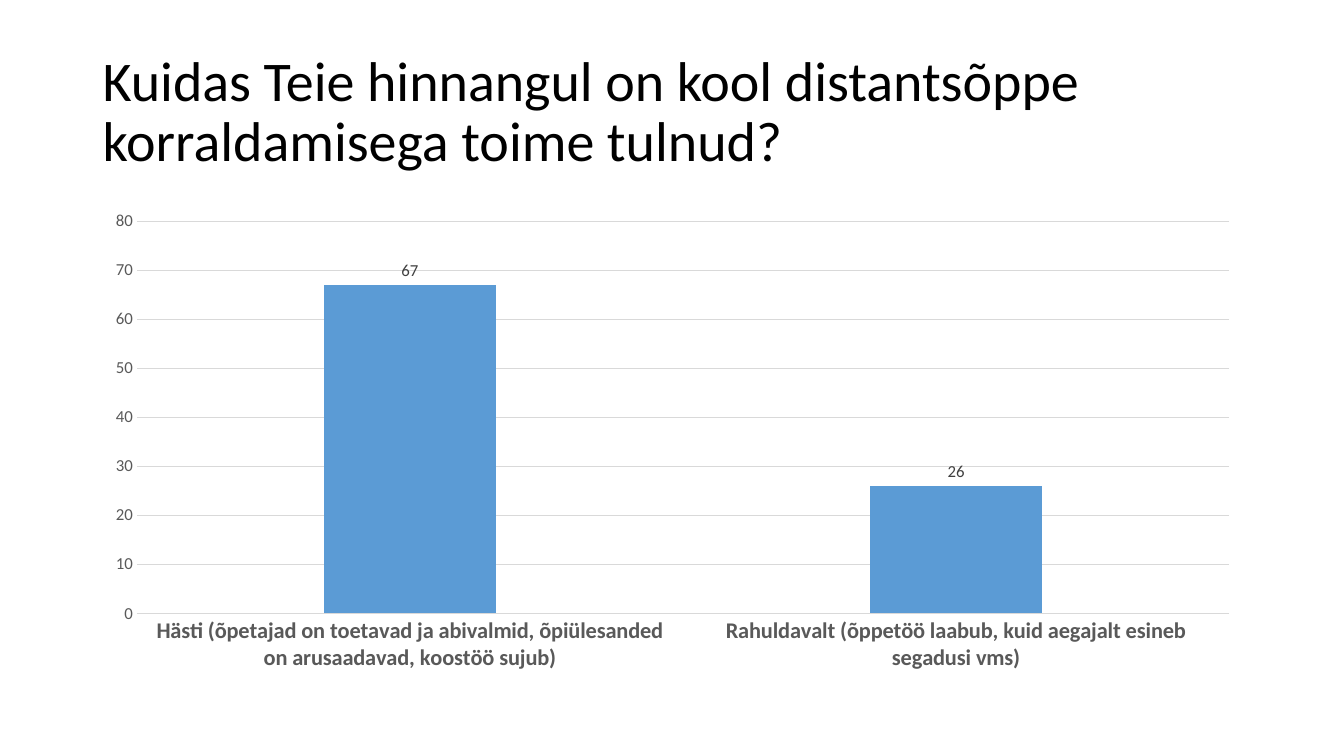
import pptx
import pptx.chart.data
import pptx.dml.color
import pptx.enum.chart
import pptx.enum.text
import pptx.util
from pptx.util import Inches

BLACK = pptx.dml.color.RGBColor(0x00, 0x00, 0x00)
AXIS_GREY = pptx.dml.color.RGBColor(0x59, 0x59, 0x59)
LABEL_GREY = pptx.dml.color.RGBColor(0x40, 0x40, 0x40)
GRID_GREY = pptx.dml.color.RGBColor(0xD9, 0xD9, 0xD9)
BAR_BLUE = pptx.dml.color.RGBColor(0x5B, 0x9B, 0xD5)


class SurveySlide:
    typeface = "Calibri"

    def __init__(self, presentation):
        self.slide = presentation.slides.add_slide(presentation.slide_layouts[6])

    def style_font(self, font, size, color, bold=False):
        font.name = self.typeface
        font.size = pptx.util.Pt(size)
        font.color.rgb = color
        font.bold = bold

    def style_line(self, line):
        line.color.rgb = GRID_GREY
        line.width = pptx.util.Pt(0.75)

    def add_title(self, wording, left, top, width, height):
        frame = self.slide.shapes.add_textbox(left, top, width, height).text_frame
        frame.word_wrap = True
        frame.vertical_anchor = pptx.enum.text.MSO_ANCHOR.MIDDLE
        paragraph = frame.paragraphs[0]
        paragraph.line_spacing = 0.9
        run = paragraph.add_run()
        run.text = wording
        self.style_font(run.font, 40, BLACK)

    def add_columns(self, answers, left, top, width, height):
        answer_data = pptx.chart.data.CategoryChartData()
        answer_data.categories = list(answers)
        answer_data.add_series("Series 1", list(answers.values()))
        chart = self.slide.shapes.add_chart(
            pptx.enum.chart.XL_CHART_TYPE.COLUMN_CLUSTERED,
            left, top, width, height, answer_data).chart
        chart.has_legend = False
        chart.has_title = False
        self.style_font(chart.font, 10, BLACK)

        answer_axis, count_axis = chart.category_axis, chart.value_axis
        for axis in (answer_axis, count_axis):
            axis.major_tick_mark = pptx.enum.chart.XL_TICK_MARK.NONE
            axis.minor_tick_mark = pptx.enum.chart.XL_TICK_MARK.NONE
        self.style_font(answer_axis.tick_labels.font, 16, AXIS_GREY, bold=True)
        self.style_font(count_axis.tick_labels.font, 12, AXIS_GREY)
        self.style_line(answer_axis.format.line)
        self.style_line(count_axis.major_gridlines.format.line)
        count_axis.format.line.fill.background()
        count_axis.minimum_scale = 0
        count_axis.maximum_scale = 80
        count_axis.major_unit = 10

        plot = chart.plots[0]
        plot.gap_width = 219
        plot.overlap = -27
        plot.vary_by_categories = False
        columns = plot.series[0]
        columns.format.fill.solid()
        columns.format.fill.fore_color.rgb = BAR_BLUE
        counts = columns.data_labels
        counts.show_value = True
        counts.position = pptx.enum.chart.XL_LABEL_POSITION.OUTSIDE_END
        self.style_font(counts.font, 12, LABEL_GREY)


def main():
    presentation = pptx.Presentation()
    presentation.slide_width = Inches(13.33)
    presentation.slide_height = Inches(7.5)
    survey = SurveySlide(presentation)
    left, width = Inches(0.92), Inches(11.5)
    survey.add_title(
        "Kuidas Teie hinnangul on kool distantsõppe korraldamisega toime tulnud?",
        left, Inches(0.4), width, Inches(1.45))
    survey.add_columns({
        "Hästi (õpetajad on toetavad ja abivalmid, õpiülesanded on arusaadavad, koostöö sujub)": 67,
        "Rahuldavalt (õppetöö laabub, kuid aegajalt esineb segadusi vms)": 26,
    }, left, Inches(2), width, Inches(4.76))
    presentation.save("out.pptx")


if __name__ == "__main__":
    main()
